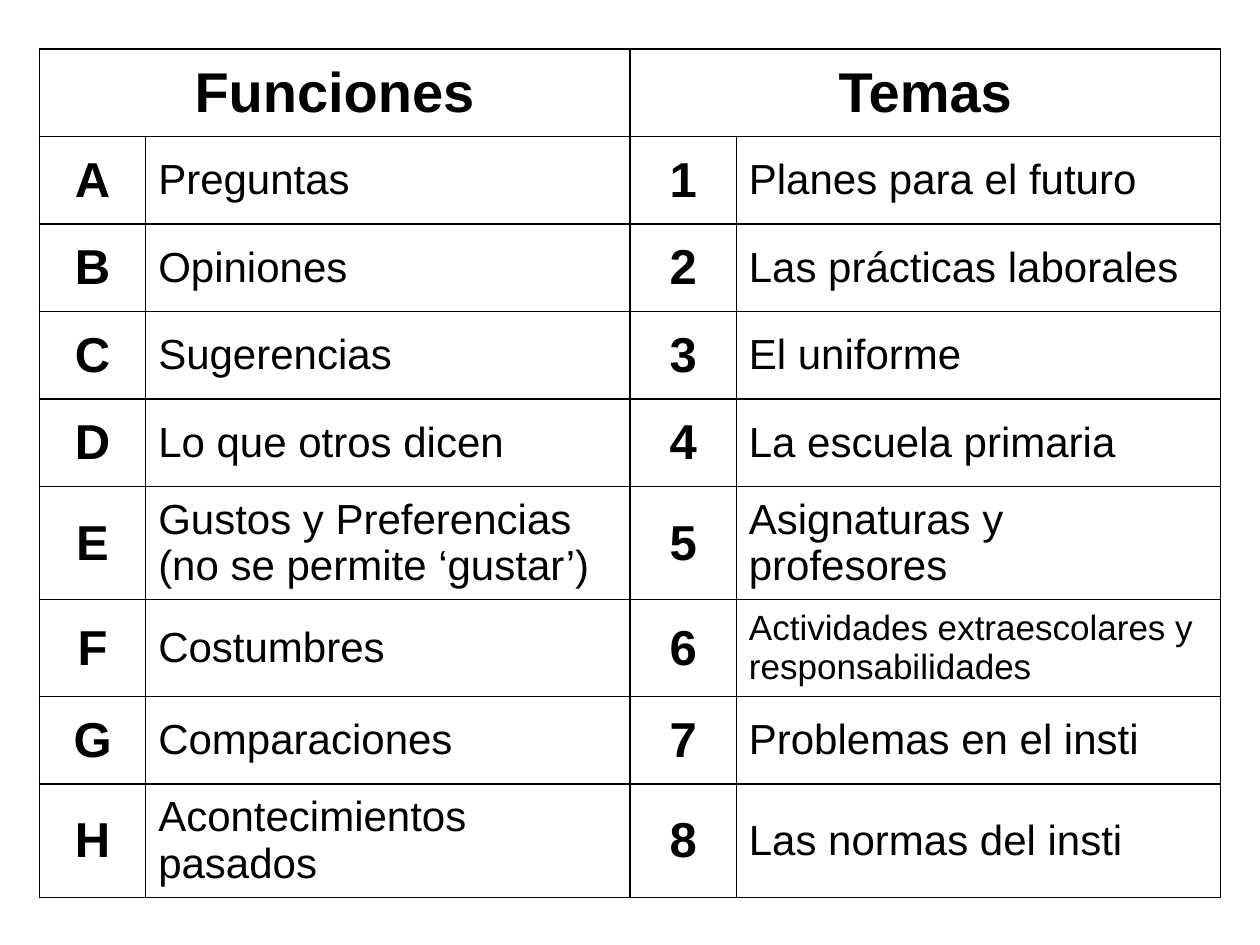
from dataclasses import dataclass

from lxml.etree import SubElement
from pptx import Presentation
from pptx.dml.color import RGBColor
from pptx.enum.text import MSO_ANCHOR as Anchor, PP_ALIGN as Align
from pptx.oxml.ns import qn
from pptx.util import Pt


@dataclass(frozen=True)
class Theme:
    font: str = "Arial"
    ink: str = "000000"
    paper: str = "FFFFFF"
    heading: int = 32
    key: int = 28
    label: int = 24
    small: int = 20
    rule: int = 1


THEME = Theme()

HEADINGS = ("Funciones", "Temas")
ENTRIES = [
    ("Preguntas", "Planes para el futuro"),
    ("Opiniones", "Las prácticas laborales"),
    ("Sugerencias", "El uniforme"),
    ("Lo que otros dicen", "La escuela primaria"),
    ("Gustos y Preferencias (no se permite ‘gustar’)", "Asignaturas y profesores"),
    ("Costumbres", "Actividades extraescolares y responsabilidades"),
    ("Comparaciones", "Problemas en el insti"),
    ("Acontecimientos pasados", "Las normas del insti"),
]
SMALL_LABELS = {"Actividades extraescolares y responsabilidades"}
ROW_HEIGHT = 50
TALL_ROWS = {5: 64.8, 6: 55.3, 8: 64.8}
KEY_SHARE = 0.09


def style_cell(cell):
    tcPr = cell._tc.get_or_add_tcPr()
    for side in ("lnL", "lnR", "lnT", "lnB"):
        ln = SubElement(tcPr, qn(f"a:{side}"), w=str(Pt(THEME.rule)))
        fill = SubElement(ln, qn("a:solidFill"))
        SubElement(fill, qn("a:srgbClr"), val=THEME.ink)
    cell.fill.solid()
    cell.fill.fore_color.rgb = RGBColor.from_string(THEME.paper)
    cell.vertical_anchor = Anchor.MIDDLE
    cell.margin_left = cell.margin_right = Pt(7.2)
    cell.margin_top = cell.margin_bottom = Pt(3.6)


def write_cell(cell, text, size, bold=False, align=Align.LEFT):
    p = cell.text_frame.paragraphs[0]
    p.alignment = align
    r = p.add_run()
    r.text = text
    r.font.name = THEME.font
    r.font.size = Pt(size)
    r.font.bold = bold
    r.font.color.rgb = RGBColor.from_string(THEME.ink)


def add_key_table(slide, left, top, width):
    heights = [TALL_ROWS.get(i, ROW_HEIGHT) for i in range(len(ENTRIES) + 1)]
    frame = slide.shapes.add_table(len(heights), 4, Pt(left), Pt(top),
                                   Pt(width), Pt(sum(heights)))
    table = frame.table
    table.first_row = table.horz_banding = False
    key_width = width * KEY_SHARE
    for i, column in enumerate(table.columns):
        column.width = Pt(width / 2 - key_width if i % 2 else key_width)
    for row, height in zip(table.rows, heights):
        row.height = Pt(height)
        for cell in row.cells:
            style_cell(cell)

    for i, heading in enumerate(HEADINGS):
        cell = table.cell(0, 2 * i)
        cell.merge(table.cell(0, 2 * i + 1))
        write_cell(cell, heading, THEME.heading, True, Align.CENTER)
    for n, labels in enumerate(ENTRIES, 1):
        for i, (key, label) in enumerate(zip(("ABCDEFGH"[n - 1], str(n)), labels)):
            write_cell(table.cell(n, 2 * i), key, THEME.key, True, Align.CENTER)
            size = THEME.small if label in SMALL_LABELS else THEME.label
            write_cell(table.cell(n, 2 * i + 1), label, size)


def main():
    prs = Presentation()
    prs.slide_width, prs.slide_height = Pt(720), Pt(540)
    slide = prs.slides.add_slide(prs.slide_layouts[6])
    add_key_table(slide, 22.5, 28, 675)
    prs.save("out.pptx")


if __name__ == "__main__":
    main()
